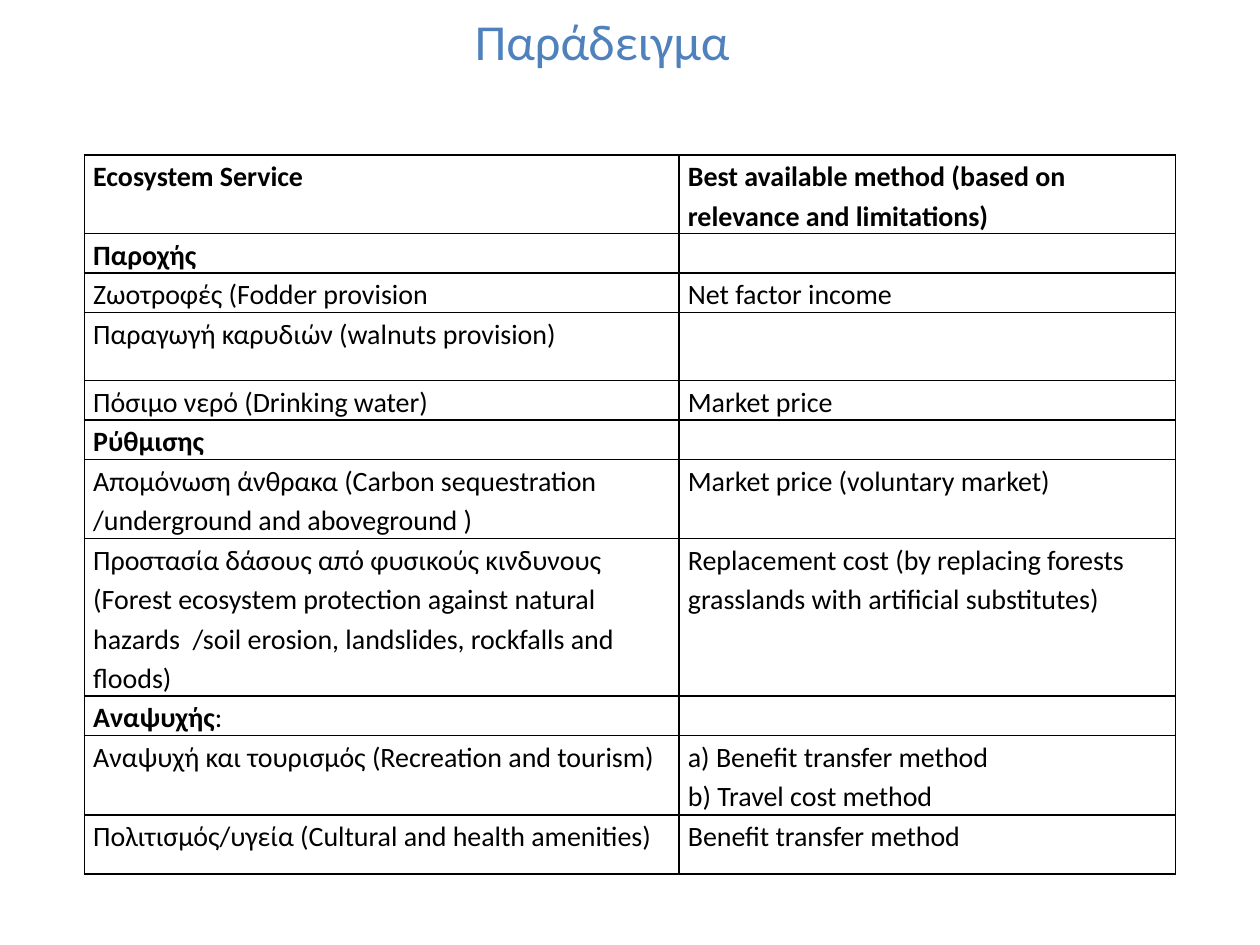
from lxml import etree
from pptx import Presentation
from pptx.dml.color import RGBColor
from pptx.enum import text
from pptx.oxml.ns import qn
from pptx.util import Inches, Pt

FONT = "Calibri"
BLACK, WHITE, BLUE = "000000", "FFFFFF", "4F81BD"
COLUMN_WIDTHS = [4.72, 3.94]

# Row height, service, methods (one per line), number of leading bold characters
HEADER = (0.62, "Ecosystem Service",
          ["Best available method (based on relevance and limitations)"])
SECTIONS = [
    ((0.31, "Παροχής", ""), [
        (0.31, "Ζωοτροφές (Fodder provision", ["Net factor income"]),
        (0.54, "Παραγωγή καρυδιών (walnuts provision)", []),
        (0.31, "Πόσιμο νερό (Drinking water)", ["Market price"]),
    ]),
    ((0.31, "Ρύθμισης", ""), [
        (0.63, "Απομόνωση άνθρακα (Carbon sequestration /underground and aboveground )",
         ["Market price (voluntary market)"]),
        (1.25, "Προστασία δάσους από φυσικούς κινδυνους (Forest ecosystem protection "
               "against natural hazards  /soil erosion, landslides, rockfalls and floods)",
         ["Replacement cost (by replacing forests grasslands with artificial substitutes)"]),
    ]),
    ((0.31, "Αναψυχής", ":"), [
        (0.63, "Αναψυχή και τουρισμός (Recreation and tourism)",
         ["a) Benefit transfer method", "b) Travel cost method"]),
        (0.47, "Πολιτισμός/υγεία (Cultural and health amenities)",
         ["Benefit transfer method"]),
    ]),
]


def color(value):
    return RGBColor.from_string(value)


def add_run(para, words, size, ink=BLACK, bold=False):
    span = para.add_run()
    span.text = words
    span.font.name = FONT
    span.font.size = Pt(size)
    span.font.bold = bold
    span.font.color.rgb = color(ink)


def add_title(page, words):
    title = page.shapes.title
    title.left, title.top = Inches(0.28), Inches(0.13)
    title.width, title.height = Inches(9), Inches(0.38)
    frame = title.text_frame
    frame.auto_size = text.MSO_AUTO_SIZE.NONE
    frame.vertical_anchor = text.MSO_ANCHOR.MIDDLE
    para = frame.paragraphs[0]
    para.alignment = text.PP_ALIGN.CENTER
    add_run(para, words, 28.8, BLUE)


def add_borders(cell):
    """Draw all four sides; border elements must precede the fill."""
    properties = cell._tc.get_or_add_tcPr()
    for index, side in enumerate(("a:lnL", "a:lnR", "a:lnT", "a:lnB")):
        line = etree.Element(qn(side), w=str(Pt(1)))
        fill = etree.SubElement(line, qn("a:solidFill"))
        etree.SubElement(fill, qn("a:srgbClr"), val=BLACK)
        properties.insert(index, line)


def fill_cell(cell, lines):
    """Write lines, each a list of (words, bold) runs, into a bordered cell."""
    cell.margin_left = cell.margin_right = Inches(0.07)
    cell.margin_top = cell.margin_bottom = 0
    cell.fill.solid()
    cell.fill.fore_color.rgb = color(WHITE)
    add_borders(cell)
    frame = cell.text_frame
    for number, runs in enumerate(lines):
        para = frame.add_paragraph() if number else frame.paragraphs[0]
        para.line_spacing = 1.15
        for words, bold in runs:
            add_run(para, words, 16, bold=bold)


def plain_row(height, service, methods, bold=False):
    return height, [[(service, bold)]], [[(method, bold)] for method in methods]


def section_row(height, name, suffix):
    runs = [(name, True)]
    if suffix:
        runs.append((suffix, False))
    return height, [runs], []


def table_rows():
    rows = [plain_row(*HEADER, bold=True)]
    for heading, services in SECTIONS:
        rows.append(section_row(*heading))
        rows.extend(plain_row(*service) for service in services)
    return rows


def add_service_table(page):
    rows = table_rows()
    frame = page.shapes.add_table(
        len(rows), len(COLUMN_WIDTHS), Inches(0.67), Inches(1.23),
        Inches(sum(COLUMN_WIDTHS)), Inches(sum(row[0] for row in rows)))
    table = frame.table
    table.first_row = table.horz_banding = False
    for column, width in zip(table.columns, COLUMN_WIDTHS):
        column.width = Inches(width)
    for row, (height, *contents) in zip(table.rows, rows):
        row.height = Inches(height)
        for cell, lines in zip(row.cells, contents):
            fill_cell(cell, lines)


def main():
    deck = Presentation()
    deck.slide_width, deck.slide_height = Inches(10), Inches(7.5)
    page = deck.slides.add_slide(deck.slide_layouts[5])
    add_title(page, "Παράδειγμα")
    add_service_table(page)
    deck.save("out.pptx")


if __name__ == "__main__":
    main()
